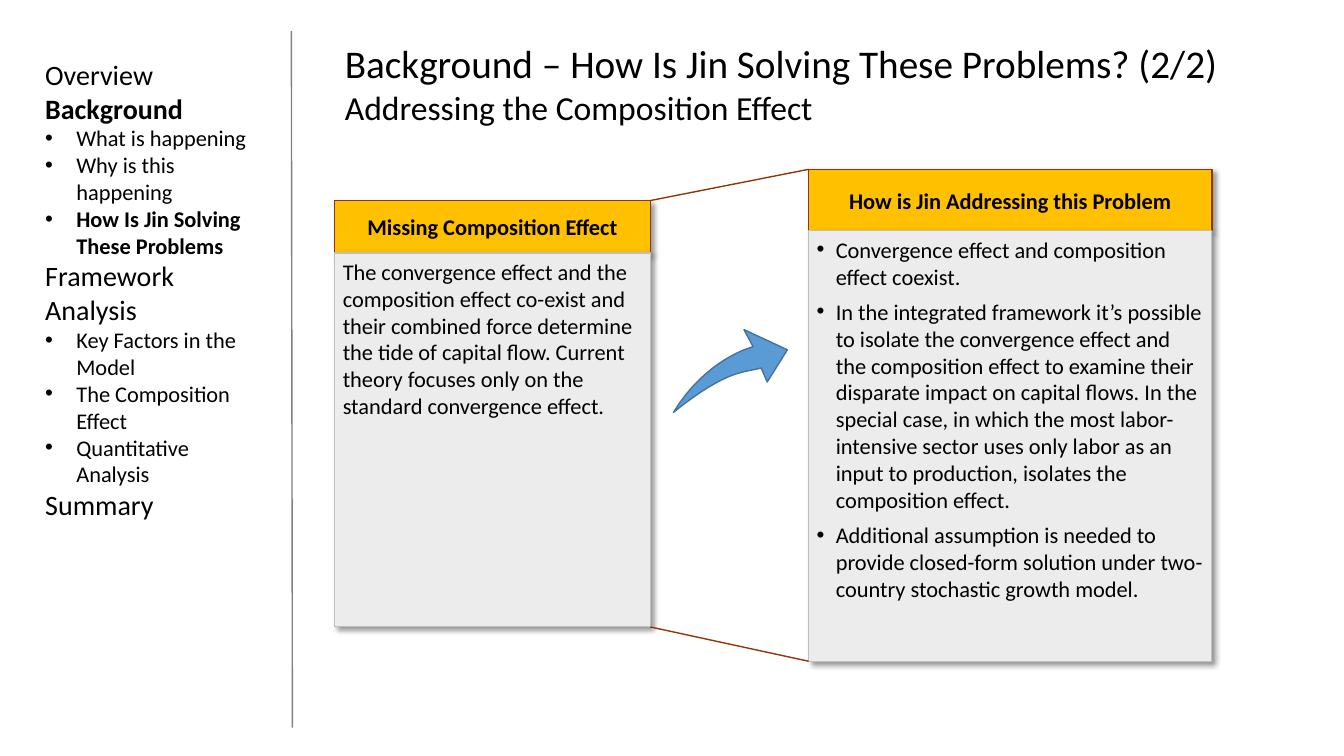
from lxml import etree
from pptx import Presentation
from pptx.dml.color import RGBColor
from pptx.enum.shapes import MSO_CONNECTOR, MSO_SHAPE
from pptx.enum.text import MSO_ANCHOR, MSO_AUTO_SIZE, PP_ALIGN
from pptx.oxml.ns import qn
from pptx.util import Inches, Pt

BLACK = RGBColor(0x00, 0x00, 0x00)
GOLD = RGBColor(0xFF, 0xC0, 0x00)
RUST = RGBColor(0x8F, 0x37, 0x08)
PALE_GRAY = RGBColor(0xEC, 0xEC, 0xEC)
BORDER_GRAY = RGBColor(0xBF, 0xBF, 0xBF)
RULE_GRAY = RGBColor(0x80, 0x80, 0x80)
BLUE = RGBColor(0x5B, 0x9B, 0xD5)
DARK_BLUE = RGBColor(0x43, 0x73, 0x9E)
FONT = "Calibri"

TITLE_LINES = [
    ("Background – How Is Jin Solving These Problems? (2/2)", 28),
    ("Addressing the Composition Effect", 24),
]

# Sidebar entries: text, is a sub-item, is current
AGENDA = [
    ("Overview", False, False),
    ("Background", False, True),
    ("What is happening", True, False),
    ("Why is this happening", True, False),
    ("How Is Jin Solving These Problems", True, True),
    ("Framework", False, False),
    ("Analysis", False, False),
    ("Key Factors in the Model", True, False),
    ("The Composition Effect", True, False),
    ("Quantitative Analysis", True, False),
    ("Summary", False, False),
]

PROBLEM = [
    "The convergence effect and the composition effect co-exist and their combined "
    "force determine the tide of capital flow. Current theory focuses only on the "
    "standard convergence effect.",
]
ANSWERS = [
    "Convergence effect and composition effect coexist.",
    "In the integrated framework it’s possible to isolate the convergence effect and "
    "the composition effect to examine their disparate impact on capital flows. In the "
    "special case, in which the most labor-intensive sector uses only labor as an input "
    "to production, isolates the composition effect.",
    "Additional assumption is needed to provide closed-form solution under two-country "
    "stochastic growth model.",
]


def write_paragraph(text_frame, index, text, size, bold=False, align=PP_ALIGN.LEFT):
    paragraph = text_frame.paragraphs[0] if index == 0 else text_frame.add_paragraph()
    paragraph.text = text
    paragraph.alignment = align
    font = paragraph.runs[0].font
    font.name, font.size, font.bold = FONT, Pt(size), bold
    font.color.rgb = BLACK
    return paragraph


def add_bullet(paragraph, indent):
    properties = paragraph._p.get_or_add_pPr()
    properties.set("marL", str(Inches(indent)))
    properties.set("indent", str(-Inches(indent)))
    etree.SubElement(properties, qn("a:buFont"), typeface="Arial")
    etree.SubElement(properties, qn("a:buChar"), char="•")


def add_shadow(shape):
    shape.shadow.inherit = False
    effects = shape._element.spPr.find(qn("a:effectLst"))
    shadow = etree.SubElement(effects, qn("a:outerShdw"), blurRad=str(Pt(4)),
                              dist=str(Pt(3)), dir="2700000", algn="tl", rotWithShape="0")
    color = etree.SubElement(shadow, qn("a:srgbClr"), val="000000")
    etree.SubElement(color, qn("a:alpha"), val="40000")


def add_line(slide, start, end, color):
    points = [Inches(value) for value in (*start, *end)]
    line = slide.shapes.add_connector(MSO_CONNECTOR.STRAIGHT, *points)
    line.line.color.rgb = color
    line.line.width = Pt(1)
    etree.SubElement(line._element.spPr, qn("a:effectLst"))


def add_title(slide, left, top, width, height):
    title = slide.shapes.title
    title.left, title.top = Inches(left), Inches(top)
    title.width, title.height = Inches(width), Inches(height)
    text_frame = title.text_frame
    text_frame.auto_size = MSO_AUTO_SIZE.NONE
    text_frame.vertical_anchor = MSO_ANCHOR.TOP
    for index, (text, size) in enumerate(TITLE_LINES):
        write_paragraph(text_frame, index, text, size)


def add_sidebar(slide, left, top, width, height):
    box = slide.shapes.add_textbox(*map(Inches, (left, top, width, height)))
    box.text_frame.word_wrap = True
    for index, (text, is_sub_item, is_current) in enumerate(AGENDA):
        size = 16 if is_sub_item else 20
        paragraph = write_paragraph(box.text_frame, index, text, size, is_current)
        if is_sub_item:
            add_bullet(paragraph, 0.31)


def add_panel(group, box, fill, border, border_width, vertical_inset):
    panel = group.shapes.add_shape(MSO_SHAPE.RECTANGLE, *map(Inches, box))
    panel.fill.solid()
    panel.fill.fore_color.rgb = fill
    panel.line.color.rgb = border
    panel.line.width = Pt(border_width)
    add_shadow(panel)
    text_frame = panel.text_frame
    text_frame.word_wrap = True
    text_frame.margin_left = text_frame.margin_right = Inches(0.08)
    text_frame.margin_top = text_frame.margin_bottom = Inches(vertical_inset)
    return text_frame


def add_card(slide, box, header_height, heading, texts, bulleted=False):
    left, top, width, height = box
    group = slide.shapes.add_group_shape()
    # Header
    header = add_panel(group, (left, top, width, header_height), GOLD, RUST, 1, 0)
    header.vertical_anchor = MSO_ANCHOR.MIDDLE
    write_paragraph(header, 0, heading, 16, True, PP_ALIGN.CENTER)
    # Body
    body_box = (left, top + header_height, width, height - header_height)
    body = add_panel(group, body_box, PALE_GRAY, BORDER_GRAY, 0.75, 0.05)
    body.vertical_anchor = MSO_ANCHOR.TOP
    for index, text in enumerate(texts):
        paragraph = write_paragraph(body, index, text, 16)
        paragraph.space_after = Pt(6)
        if bulleted:
            add_bullet(paragraph, 0.19)


def curve_points(start, control_1, control_2, end, steps=16):
    points = []
    for step in range(1, steps + 1):
        t = step / steps
        weights = ((1 - t) ** 3, 3 * t * (1 - t) ** 2, 3 * t * t * (1 - t), t ** 3)
        corners = (start, control_1, control_2, end)
        points.append(tuple(sum(w * corner[axis] for w, corner in zip(weights, corners))
                            for axis in (0, 1)))
    return points


def add_curved_arrow(slide, left, top):
    # Outline relative to the top left of the arrow
    neck, lower_neck, tail = (0.79, 0.17), (0.87, 0.38), (0, 0.82)
    outline = [neck, (0.7, 0), (1.13, 0.2), (0.93, 0.52), lower_neck]
    outline += curve_points(lower_neck, (0.71, 0.43), (0.55, 0.38), tail)
    outline += curve_points(tail, (0.33, 0.28), neck, neck)
    points = [(Inches(left + x), Inches(top + y)) for x, y in outline]
    builder = slide.shapes.build_freeform(*points[0])
    builder.add_line_segments(points[1:], close=True)
    arrow = builder.convert_to_shape()
    arrow.shadow.inherit = False
    arrow.fill.solid()
    arrow.fill.fore_color.rgb = BLUE
    arrow.line.color.rgb = DARK_BLUE
    arrow.line.width = Pt(1)


def add_comparison(slide, problem_box, answer_box):
    add_card(slide, problem_box, 0.52, "Missing Composition Effect", PROBLEM)
    add_card(slide, answer_box, 0.61, "How is Jin Addressing this Problem", ANSWERS, True)
    # Lines joining the facing corners of the cards
    left, top, width, height = problem_box
    right = left + width
    answer_left, answer_top, _, answer_height = answer_box
    add_line(slide, (right, top), (answer_left, answer_top), RUST)
    add_line(slide, (right, top + height), (answer_left, answer_top + answer_height), RUST)
    add_curved_arrow(slide, right + 0.23, top + 1.28)


def main():
    presentation = Presentation()
    presentation.slide_width, presentation.slide_height = Inches(13.33), Inches(7.5)
    slide = presentation.slides.add_slide(presentation.slide_layouts[5])
    add_title(slide, 3.32, 0.34, 9.35, 0.98)
    add_line(slide, (2.89, 0.31), (2.9, 7.22), RULE_GRAY)
    add_sidebar(slide, 0.35, 0.52, 2.37, 5.55)
    add_comparison(slide, (3.32, 1.99, 3.13, 4.23), (8.02, 1.68, 4, 4.88))
    presentation.save("out.pptx")


if __name__ == "__main__":
    main()
